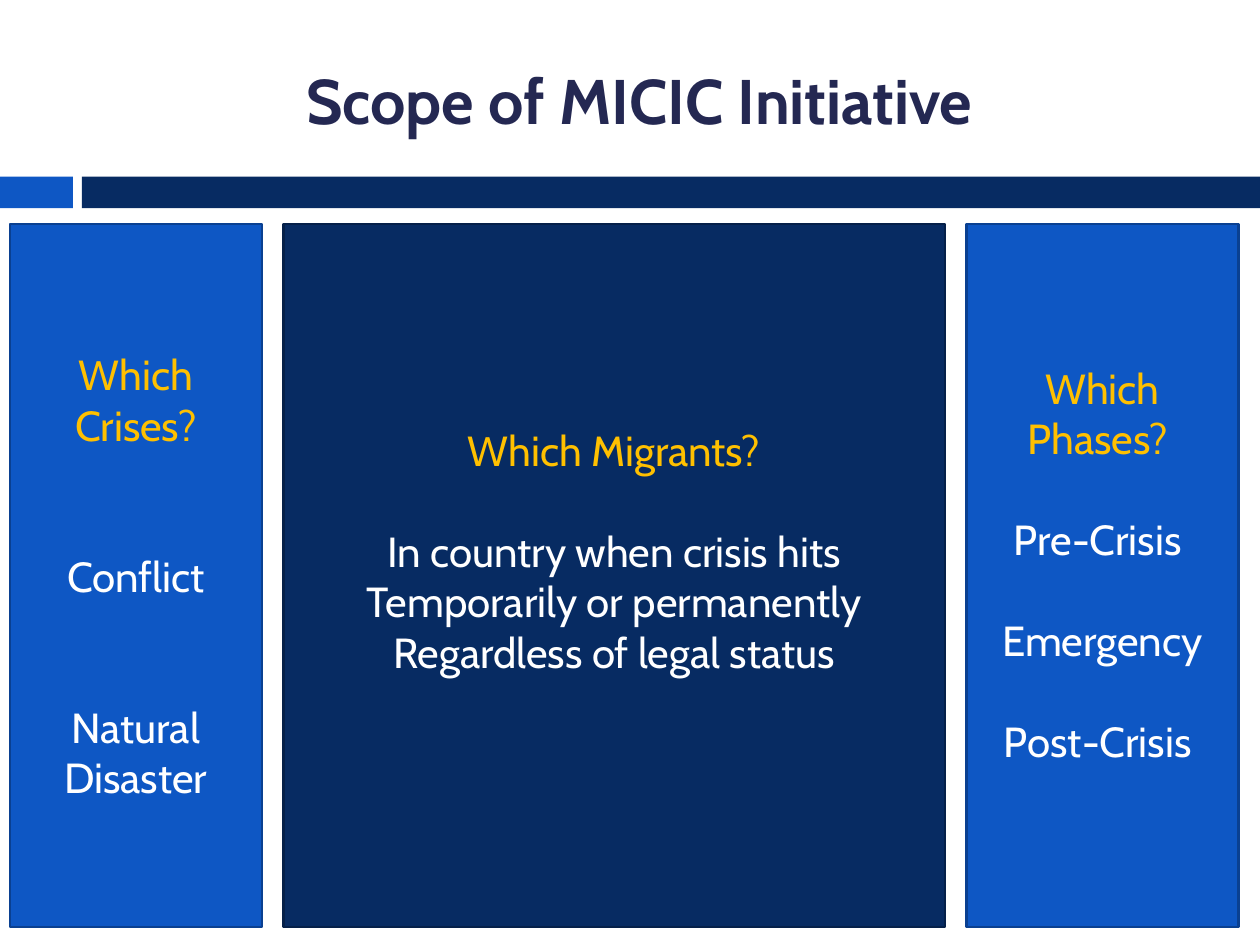
from dataclasses import dataclass

import pptx
import pptx.dml.color
import pptx.enum.shapes
import pptx.enum.text
import pptx.util
from pptx.util import Cm

FONT = "Cabin"
BLUE, BLUE_EDGE = "0E57C4", "0A4091"
NAVY, NAVY_EDGE = "072B62", "052049"
GOLD, WHITE, TITLE_INK = "FFC000", "FFFFFF", "242852"
LINE_PITCH = 28.8  # height of one 24 pt line, in points

SLIDE_WIDTH, SLIDE_HEIGHT = 25.4, 19.05
BAND_TOP, BAND_HEIGHT = 3.56, 0.64
PANEL_TOP, PANEL_HEIGHT = 4.52, 14.17


@dataclass
class Panel:
    left: float
    width: float
    fill: str
    edge: str
    question: str
    answers: list[str]
    lead_gap: int  # empty lines between question and answers
    answer_gap: int  # empty lines between answers
    bottom_inset: float = 0.13


PANELS = [
    Panel(0.2, 5.08, BLUE, BLUE_EDGE, "Which Crises?",
          ["Conflict", "Natural Disaster"], 2, 2),
    Panel(5.71, 13.34, NAVY, NAVY_EDGE, "Which Migrants?",
          ["In country when crisis hits", "Temporarily or permanently",
           "Regardless of legal status"], 1, 0, 1.14),
    Panel(19.48, 5.49, BLUE, BLUE_EDGE, "Which Phases? ",
          ["Pre-Crisis ", "Emergency", "Post-Crisis "], 1, 1, 0.6),
]


def rgb(value: str) -> pptx.dml.color.RGBColor:
    return pptx.dml.color.RGBColor.from_string(value)


def write(paragraph, text: str, *, size: float = 24, color: str = WHITE,
          bold: bool = False, before: float = 0) -> None:
    paragraph.alignment = pptx.enum.text.PP_ALIGN.CENTER
    paragraph.space_before = pptx.util.Pt(before)
    run = paragraph.add_run()
    run.text = text
    run.font.name = FONT
    run.font.size = pptx.util.Pt(size)
    run.font.bold = bold
    run.font.color.rgb = rgb(color)


def add_block(slide, left: float, top: float, width: float, height: float,
              fill: str, edge: str | None = None):
    block = slide.shapes.add_shape(
        pptx.enum.shapes.MSO_SHAPE.RECTANGLE,
        Cm(left), Cm(top), Cm(width), Cm(height))
    block.shadow.inherit = False
    block.fill.solid()
    block.fill.fore_color.rgb = rgb(fill)
    if edge:
        block.line.color.rgb = rgb(edge)
        block.line.width = pptx.util.Pt(1.5)
    else:
        block.line.fill.background()
    return block


def add_panel(slide, panel: Panel) -> None:
    block = add_block(slide, panel.left, PANEL_TOP, panel.width, PANEL_HEIGHT,
                      panel.fill, panel.edge)
    frame = block.text_frame
    frame.word_wrap = True
    frame.vertical_anchor = pptx.enum.text.MSO_ANCHOR.MIDDLE
    frame.margin_bottom = Cm(panel.bottom_inset)
    write(frame.paragraphs[0], panel.question, color=GOLD)
    for index, answer in enumerate(panel.answers):
        gap = panel.answer_gap if index else panel.lead_gap
        write(frame.add_paragraph(), answer, before=gap * LINE_PITCH)


def add_title(slide, text: str) -> None:
    title = slide.shapes.add_textbox(Cm(1.7), Cm(0.64), Cm(22.66), Cm(2.74))
    frame = title.text_frame
    frame.word_wrap = True
    frame.vertical_anchor = pptx.enum.text.MSO_ANCHOR.MIDDLE
    write(frame.paragraphs[0], text, size=36, color=TITLE_INK, bold=True)


def main() -> None:
    deck = pptx.Presentation()
    deck.slide_width, deck.slide_height = Cm(SLIDE_WIDTH), Cm(SLIDE_HEIGHT)
    slide = deck.slides.add_slide(deck.slide_layouts[6])

    # Band under the title
    add_block(slide, 0, BAND_TOP, 1.47, BAND_HEIGHT, BLUE)
    add_block(slide, 1.65, BAND_TOP, SLIDE_WIDTH - 1.65, BAND_HEIGHT, NAVY)

    add_title(slide, "Scope of MICIC Initiative ")

    # Three scope questions
    for panel in PANELS:
        add_panel(slide, panel)

    deck.save("out.pptx")


if __name__ == "__main__":
    main()
